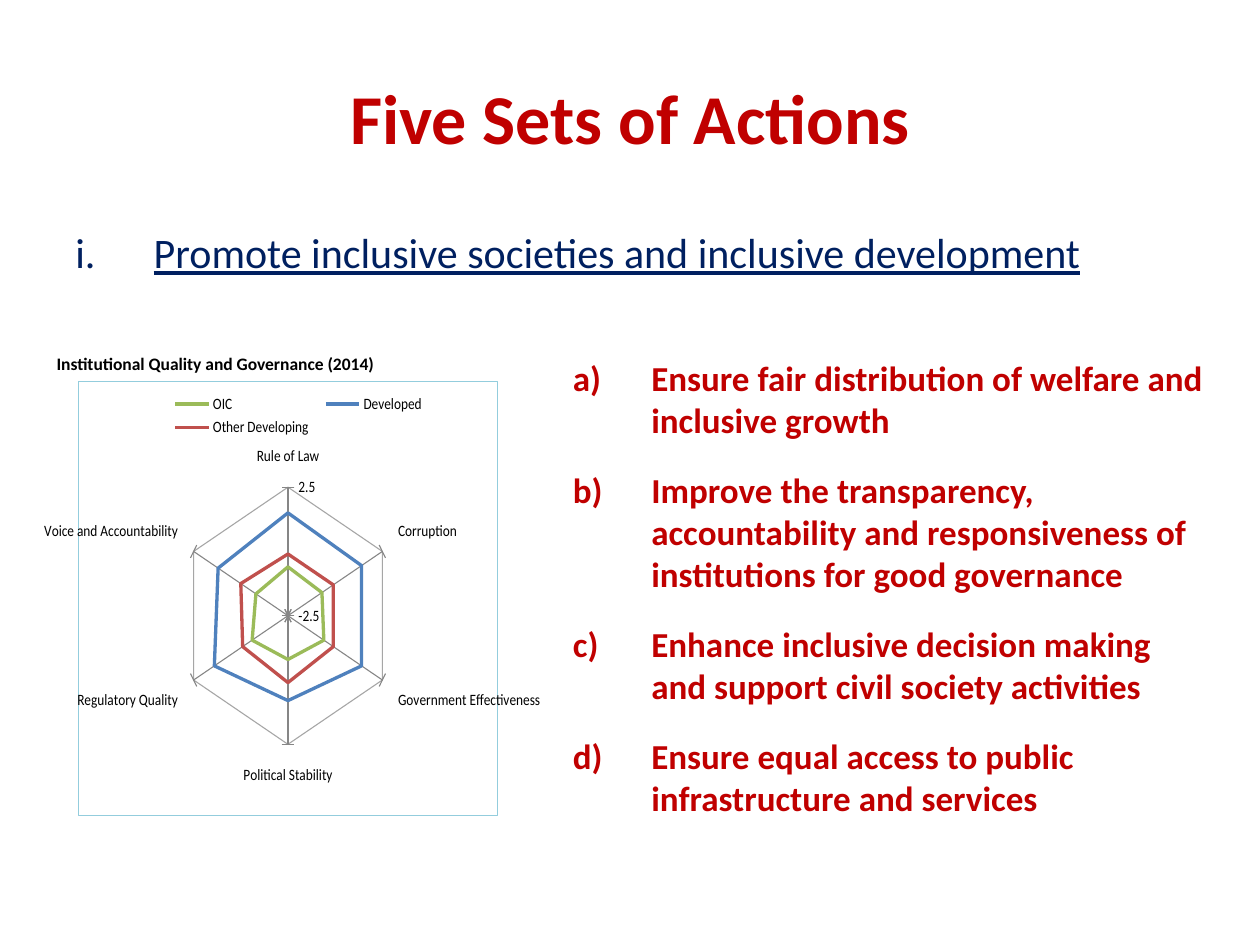
from lxml.etree import SubElement
from pptx import Presentation
from pptx.chart.data import CategoryChartData as Data
from pptx.dml.color import RGBColor
from pptx.enum.chart import XL_CHART_TYPE as Kind
from pptx.enum.chart import XL_LEGEND_POSITION as Side
from pptx.enum.chart import XL_TICK_MARK as Tick
from pptx.enum.text import MSO_ANCHOR as Anchor
from pptx.enum.text import PP_ALIGN as Align
from pptx.oxml import parse_xml
from pptx.oxml.ns import nsdecls, qn
from pptx.util import Cm, Pt

RED, NAVY, BLACK, GREY = "C00000", "002060", "000000", "A6A6A6"
ACTIONS = [
    "Ensure fair distribution of welfare and inclusive growth",
    "Improve the transparency, accountability and responsiveness of "
    "institutions for good governance",
    "Enhance inclusive decision making and support civil society activities",
    "Ensure equal access to public infrastructure and services",
]
TOPICS = ["Rule of Law", "Corruption", "Government Effectiveness",
          "Political Stability", "Regulatory Quality",
          "Voice and Accountability"]
GROUPS = [
    ("OIC", "9BBB59", [-0.6, -0.7, -0.6, -0.8, -0.6, -0.8]),
    ("Developed", "4F81BD", [1.5, 1.4, 1.4, 0.8, 1.4, 1.2]),
    ("Other Developing", "C0504D", [-0.1, -0.1, -0.1, 0.1, -0.1, 0]),
]


def paint(target, color):
    """Set a font or fill colour from a hex string."""
    target.rgb = RGBColor.from_string(color)


def style(font, size, color, bold=False):
    """Set the face, size, colour and weight of a font."""
    font.name, font.size, font.bold = "Calibri", Pt(size), bold
    paint(font.color, color)


def stroke(line, color, width=0.75):
    """Set the colour and width of a line."""
    paint(line.color, color)
    line.width = Pt(width)


def place(shape, box):
    """Move a shape to a box given in centimetres."""
    shape.left, shape.top, shape.width, shape.height = map(Cm, box)


def add_title(slide, box, text):
    """Fill the title placeholder."""
    title = slide.shapes.title
    place(title, box)
    title.text_frame.text = text
    title.text_frame.vertical_anchor = Anchor.MIDDLE
    para = title.text_frame.paragraphs[0]
    para.alignment = Align.CENTER
    style(para.font, 40, RED, True)


def add_text(slide, box, lines):
    """Add a wrapping text box and return its paragraphs."""
    frame = slide.shapes.add_textbox(*map(Cm, box)).text_frame
    frame.word_wrap = True
    frame.text = "\n".join(lines)
    return frame.paragraphs


def add_list(slide, box, lines, scheme, size, color, bold=False, under=None):
    """Add a numbered list with a hanging indent."""
    for para in add_text(slide, box, lines):
        style(para.font, size, color, bold)
        para.font.underline = under
        para.space_before, para.space_after = Pt(size * 0.2), Pt(12)
        props = para._p.get_or_add_pPr()
        props.set("marL", str(Cm(1.58)))
        props.set("indent", str(Cm(-1.58)))
        SubElement(props, qn("a:buFont"), typeface="+mj-lt")
        SubElement(props, qn("a:buAutoNum"), type=scheme)


def set_layout(parent, index, box, inner=False):
    """Give a chart part a manual layout in fractions of the chart."""
    for old in parent.findall(qn("c:layout")):
        parent.remove(old)
    layout = parse_xml(f"<c:layout {nsdecls('c')}><c:manualLayout/></c:layout>")
    rules = [("layoutTarget", "inner")] if inner else []
    rules += [("xMode", "edge"), ("yMode", "edge"), *zip("xywh", box)]
    for name, value in rules:
        SubElement(layout[0], qn(f"c:{name}"), val=str(value))
    parent.insert(index, layout)


def add_border(chart, color):
    """Draw a thin frame around the chart area."""
    chart.element.find(qn("c:chart")).addnext(parse_xml(
        f'<c:spPr {nsdecls("c", "a")}><a:noFill/><a:ln w="{Pt(0.75)}">'
        f'<a:solidFill><a:srgbClr val="{color}"/></a:solidFill></a:ln></c:spPr>'))


def add_radar(slide, box):
    """Add the radar chart of governance scores."""
    data = Data()
    data.categories = TOPICS
    for name, _, scores in GROUPS:
        data.add_series(name, scores)
    chart = slide.shapes.add_chart(Kind.RADAR, *map(Cm, box), data).chart
    style(chart.font, 9, BLACK)
    chart.has_title = False
    chart.has_legend = True
    chart.legend.position = Side.TOP
    chart.legend.include_in_layout = False
    set_layout(chart.legend._element, 1, (0.2, 0.02, 0.65, 0.12))
    area = chart.element.find(qn("c:chart")).find(qn("c:plotArea"))
    set_layout(area, 0, (0.24, 0.17, 0.52, 0.74), True)
    add_border(chart, "93CDDD")
    for series, (_, color, _) in zip(chart.plots[0].series, GROUPS):
        stroke(series.format.line, color, 2.25)
        series.smooth = False
    value, topic = chart.value_axis, chart.category_axis
    value.minimum_scale, value.maximum_scale = -2.5, 2.5
    value.major_unit = 5
    value.major_tick_mark, topic.major_tick_mark = Tick.CROSS, Tick.OUTSIDE
    value.tick_labels.number_format = "General"
    value.tick_labels.number_format_is_linked = False
    for axis in (value, topic):
        axis.has_major_gridlines = True
        axis.minor_tick_mark = Tick.NONE
        stroke(axis.major_gridlines.format.line, GREY)
        stroke(axis.format.line, "868686")


def add_panel(slide, box):
    """Add the chart with its heading above."""
    left, top, width, height = box
    head = 0.74
    para = add_text(slide, (left, top, width, head),
                    ["Institutional Quality and Governance (2014)"])[0]
    style(para.font, 10, BLACK, True)
    para.line_spacing = 1.15
    para.space_before, para.space_after = Pt(3), Pt(6)
    add_radar(slide, (left, top + head, width, height - head))


def main():
    """Build and save the slide."""
    deck = Presentation()
    deck.slide_width, deck.slide_height = Cm(25.4), Cm(19.05)
    slide = deck.slides.add_slide(deck.slide_layouts[5])
    add_title(slide, (1.27, 0.76, 22.86, 3.18), "Five Sets of Actions")
    add_list(slide, (1.27, 4.45, 22.86, 12.57),
             ["Promote inclusive societies and inclusive development"],
             "romanLcPeriod", 24, NAVY, under=True)
    add_list(slide, (11.3, 7.06, 13.26, 9.9), ACTIONS,
             "alphaLcParenR", 20, RED, bold=True)
    add_panel(slide, (0.89, 6.93, 10, 9.53))
    deck.save("out.pptx")


if __name__ == "__main__":
    main()
